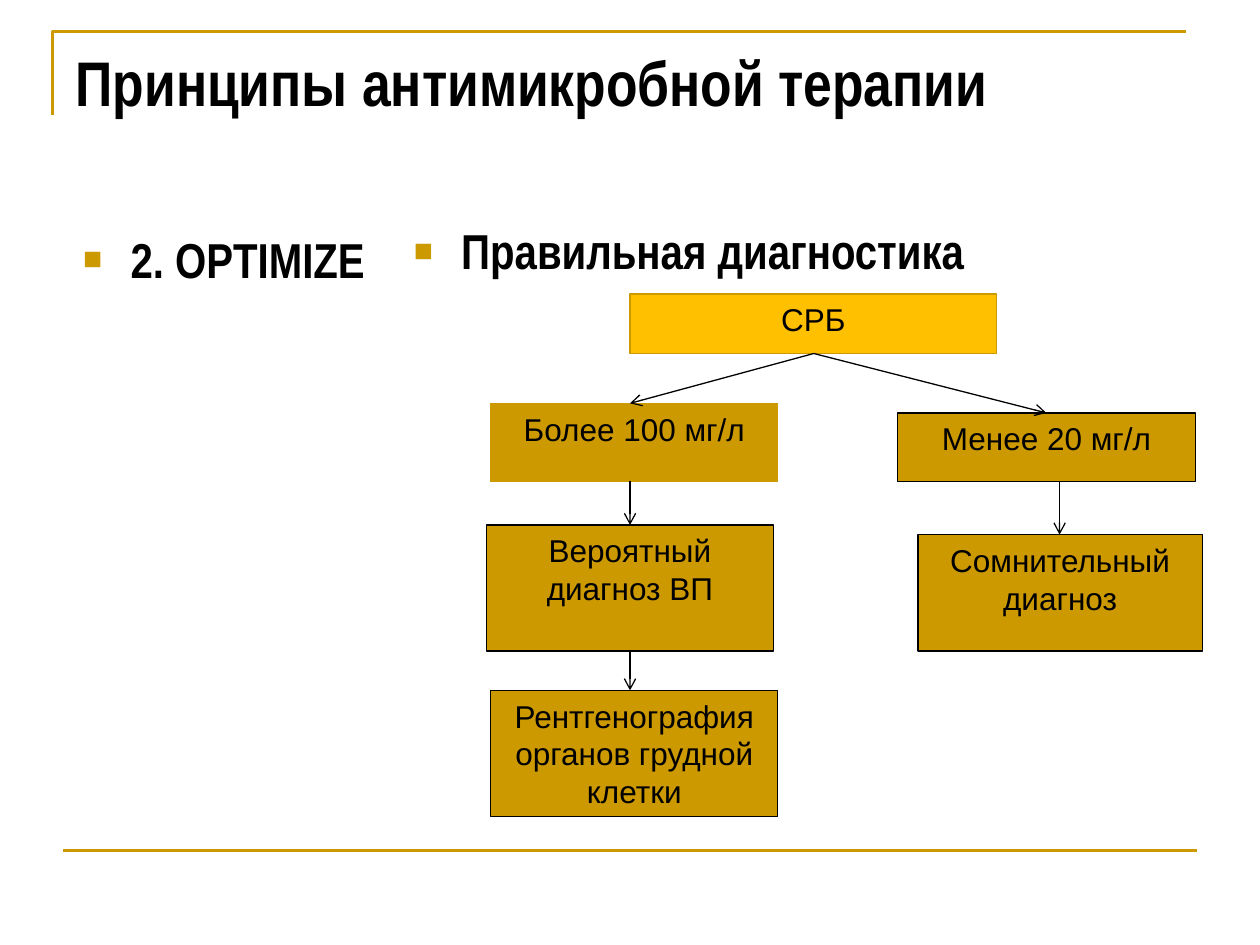
from dataclasses import dataclass

from lxml.etree import SubElement
from pptx import Presentation
from pptx.dml.color import RGBColor
from pptx.enum.shapes import MSO_CONNECTOR as Conn, MSO_SHAPE as Shape
from pptx.enum.text import MSO_ANCHOR as Anchor, MSO_AUTO_SIZE as Fit, PP_ALIGN as Align
from pptx.oxml.ns import qn
from pptx.slide import Slide
from pptx.util import Pt

BLACK = RGBColor(0x00, 0x00, 0x00)
GOLD = RGBColor(0xCC, 0x99, 0x00)
AMBER = RGBColor(0xFF, 0xC0, 0x00)


@dataclass
class Item:
    text: str
    left: float
    top: float
    width: float
    height: float


@dataclass
class Box(Item):
    fill: RGBColor = GOLD
    line: RGBColor = BLACK


@dataclass
class Line:
    x1: float
    y1: float
    x2: float
    y2: float


def set_text(frame, text: str, font: str, size: float, bold: bool, align: Align):
    frame.word_wrap = True
    frame.auto_size = Fit.NONE
    frame.vertical_anchor = Anchor.TOP
    frame.text = text
    para = frame.paragraphs[0]
    para.alignment = align
    para.font.name, para.font.size = font, Pt(size)
    para.font.bold = bold
    para.font.color.rgb = BLACK
    return para


def add_bullet(slide: Slide, item: Item) -> None:
    area = slide.shapes.add_textbox(
        Pt(item.left), Pt(item.top), Pt(item.width), Pt(item.height))
    para = set_text(area.text_frame, item.text, "Arial Narrow", 28, True, Align.LEFT)
    props = para._p.get_or_add_pPr()
    props.set("marL", str(Pt(27)))
    props.set("indent", str(-Pt(27)))
    space = SubElement(props, qn("a:spcBef"))
    SubElement(space, qn("a:spcPct"), val="20000")
    tint = SubElement(props, qn("a:buClr"))
    SubElement(tint, qn("a:srgbClr"), val=str(GOLD))
    SubElement(props, qn("a:buSzPct"), val="65000")
    SubElement(props, qn("a:buFont"), typeface="Arial")
    SubElement(props, qn("a:buChar"), char="■")


def add_box(slide: Slide, box: Box) -> None:
    rect = slide.shapes.add_shape(
        Shape.RECTANGLE, Pt(box.left), Pt(box.top), Pt(box.width), Pt(box.height))
    rect.shadow.inherit = False
    rect.fill.solid()
    rect.fill.fore_color.rgb = box.fill
    rect.line.color.rgb = box.line
    rect.line.width = Pt(0.75)
    set_text(rect.text_frame, box.text, "Arial", 18, False, Align.CENTER)


def add_line(slide: Slide, line: Line, color: RGBColor, width: float,
             arrow: bool = False) -> None:
    link = slide.shapes.add_connector(
        Conn.STRAIGHT, Pt(line.x1), Pt(line.y1), Pt(line.x2), Pt(line.y2))
    link.line.color.rgb = color
    link.line.width = Pt(width)
    if arrow:
        SubElement(link.line._get_or_add_ln(), qn("a:tailEnd"), type="arrow")
    SubElement(link._element.spPr, qn("a:effectLst"))


def add_frame(slide: Slide) -> None:
    pen = slide.shapes.build_freeform(30, 66, scale=Pt(1))
    pen.add_line_segments([(30, 18), (678, 18)], close=False)
    edge = pen.convert_to_shape()
    edge.shadow.inherit = False
    edge.fill.background()
    edge.line.color.rgb = GOLD
    edge.line.width = Pt(1.5)
    add_line(slide, Line(36, 486, 684, 486), GOLD, 1.5)


BULLETS = [
    Item("2. OPTIMIZE", 40.5, 127.5, 318, 356.5),
    Item("Правильная диагностика", 229.5, 122.5, 460, 356.5),
]

BOXES = [
    Box("СРБ", 360, 168, 209.5, 34, AMBER, GOLD),
    Box("Более 100 мг/л", 280.5, 230.5, 164, 44.5, line=GOLD),
    Box("Менее 20 мг/л", 513, 236, 170, 39),
    Box("Вероятный диагноз ВП", 278, 300, 164, 72),
    Box("Сомнительный диагноз", 524.5, 305.5, 162.5, 66.5),
    Box("Рентгенография органов грудной клетки", 280.5, 394.5, 164, 72),
]

ARROWS = [
    Line(465, 202, 360, 230.5),
    Line(360, 275, 360, 300),
    Line(360, 372, 360, 394.5),
    Line(465, 202, 598, 236),
    Line(605.5, 275, 605.5, 305.5),
]


def main() -> None:
    deck = Presentation()
    deck.slide_width, deck.slide_height = Pt(720), Pt(540)
    slide = deck.slides.add_slide(deck.slide_layouts[5])

    # Frame lines
    add_frame(slide)

    # Title
    title = slide.shapes.title
    title.left, title.top = Pt(36), Pt(21.5)
    title.width, title.height = Pt(648), Pt(90)
    set_text(title.text_frame, "Принципы антимикробной терапии",
             "Arial Narrow", 36, True, Align.LEFT)

    # Headings
    for item in BULLETS:
        add_bullet(slide, item)

    # Flow chart
    for box in BOXES:
        add_box(slide, box)
    for arrow in ARROWS:
        add_line(slide, arrow, BLACK, 0.75, arrow=True)

    deck.save("out.pptx")


if __name__ == "__main__":
    main()
